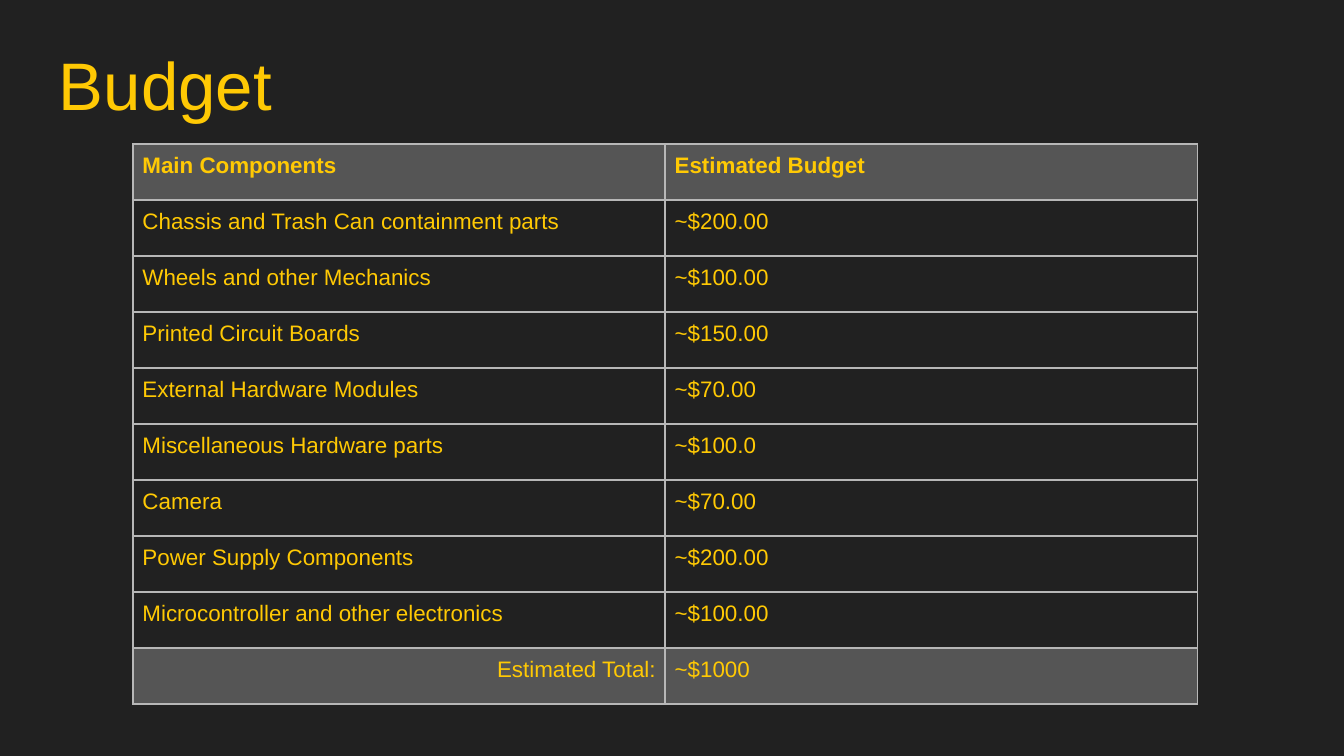
from lxml.etree import SubElement
from pptx import Presentation
from pptx.dml.color import RGBColor
from pptx.enum.text import MSO_ANCHOR as Anchor, PP_ALIGN as Align
from pptx.oxml.ns import qn
from pptx.util import Inches, Pt

BACKGROUND = RGBColor(0x21, 0x21, 0x21)
YELLOW = RGBColor(0xFF, 0xC9, 0x04)
BAND = RGBColor(0x55, 0x55, 0x55)
BORDER = RGBColor(0xB7, 0xB7, 0xB7)

TITLE_FONT = {"name": "Arial", "size": Pt(36), "bold": False}
CELL_FONT = {"name": "Arial", "size": Pt(12), "bold": False}
HEADER_FONT = {**CELL_FONT, "bold": True}
TITLE_FORMAT = {
    "word_wrap": True, "vertical_anchor": Anchor.TOP,
    "margin_left": Inches(0.1), "margin_right": Inches(0.1),
    "margin_top": Inches(0.1), "margin_bottom": Inches(0.1),
}
CELL_FORMAT = {
    "vertical_anchor": Anchor.TOP,
    "margin_left": Inches(0.07), "margin_right": Inches(0.07),
    "margin_top": Inches(0.07), "margin_bottom": Inches(0.07),
}
ROWS = [
    ("Main Components", "Estimated Budget"),
    ("Chassis and Trash Can containment parts", "~$200.00"),
    ("Wheels and other Mechanics", "~$100.00"),
    ("Printed Circuit Boards", "~$150.00"),
    ("External Hardware Modules", "~$70.00"),
    ("Miscellaneous Hardware parts", "~$100.0"),
    ("Camera", "~$70.00"),
    ("Power Supply Components", "~$200.00"),
    ("Microcontroller and other electronics", "~$100.00"),
    ("Estimated Total:", "~$1000"),
]
TOTAL_ROW = len(ROWS) - 1


def write_text(para, text, font_format):
    span = para.add_run()
    span.text = text
    for name, value in font_format.items():
        setattr(span.font, name, value)
    span.font.color.rgb = YELLOW


def add_borders(cell):
    properties = cell._tc.get_or_add_tcPr()
    for index, side in enumerate(("lnL", "lnR", "lnT", "lnB")):
        line = properties.makeelement(qn(f"a:{side}"), {"w": str(Pt(1))})
        fill = SubElement(line, qn("a:solidFill"))
        SubElement(fill, qn("a:srgbClr"), val=str(BORDER))
        properties.insert(index, line)  # borders precede the cell fill


# Deck and page, in 16:9
deck = Presentation()
deck.slide_width = Inches(10)
deck.slide_height = Inches(10) * 9 // 16
page = deck.slides.add_slide(deck.slide_layouts[6])
page.background.fill.solid()
page.background.fill.fore_color.rgb = BACKGROUND

# Title
title = page.shapes.add_textbox(Inches(0.34), Inches(0.22), Inches(9.32), Inches(0.63))
for name, value in TITLE_FORMAT.items():
    setattr(title.text_frame, name, value)
write_text(title.text_frame.paragraphs[0], "Budget", TITLE_FONT)

# Budget table, with equal rows and columns
budget = page.shapes.add_table(
    len(ROWS), 2, Inches(0.99), Inches(1.07), Inches(7.92), Inches(4.17)
).table
for row, texts in enumerate(ROWS):
    for column, text in enumerate(texts):
        cell = budget.cell(row, column)
        for name, value in CELL_FORMAT.items():
            setattr(cell, name, value)
        if row in (0, TOTAL_ROW):
            cell.fill.solid()
            cell.fill.fore_color.rgb = BAND
        else:
            cell.fill.background()
        add_borders(cell)
        para = cell.text_frame.paragraphs[0]
        write_text(para, text, HEADER_FONT if row == 0 else CELL_FONT)

# The total's label sits next to its amount
budget.cell(TOTAL_ROW, 0).text_frame.paragraphs[0].alignment = Align.RIGHT

deck.save("out.pptx")
